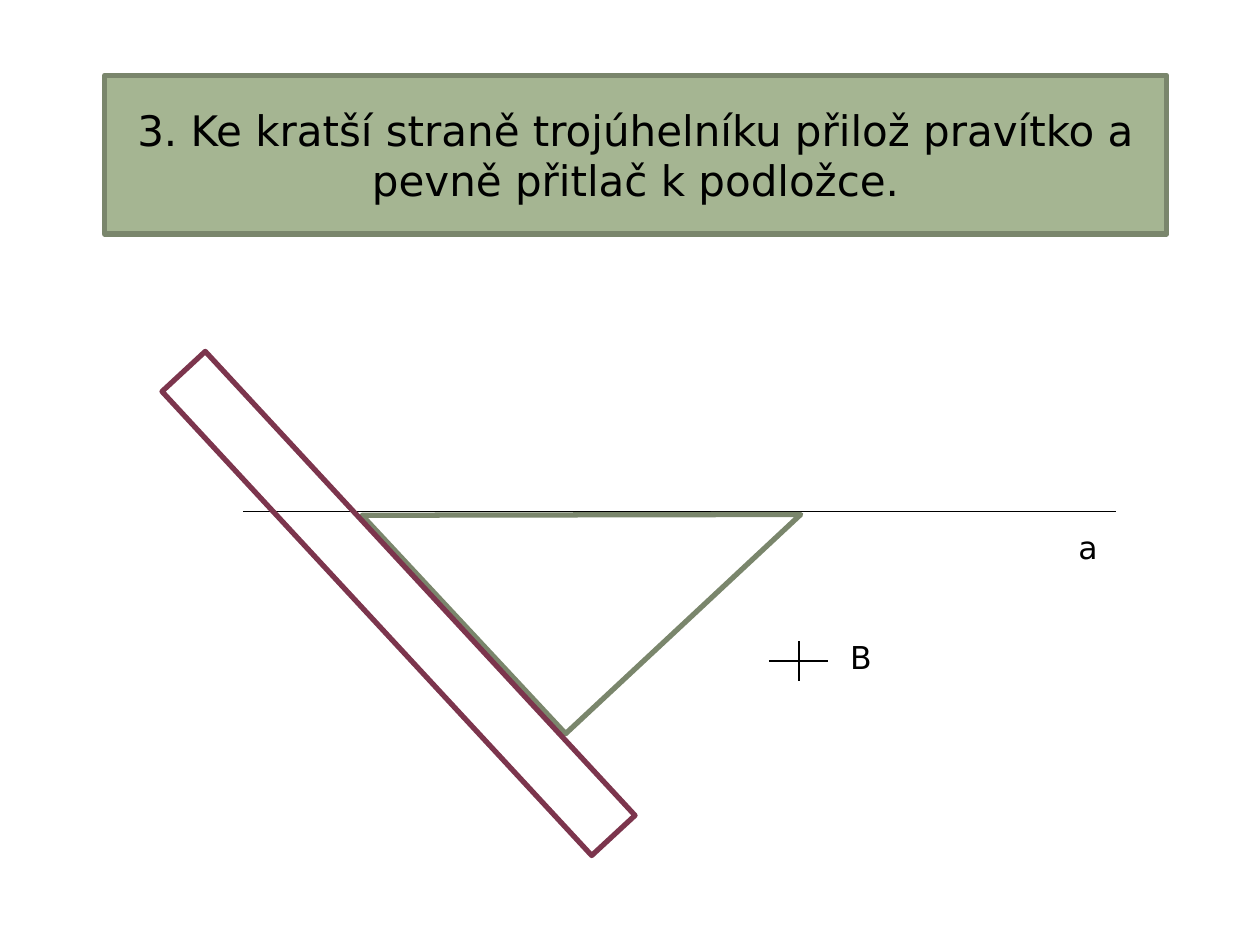
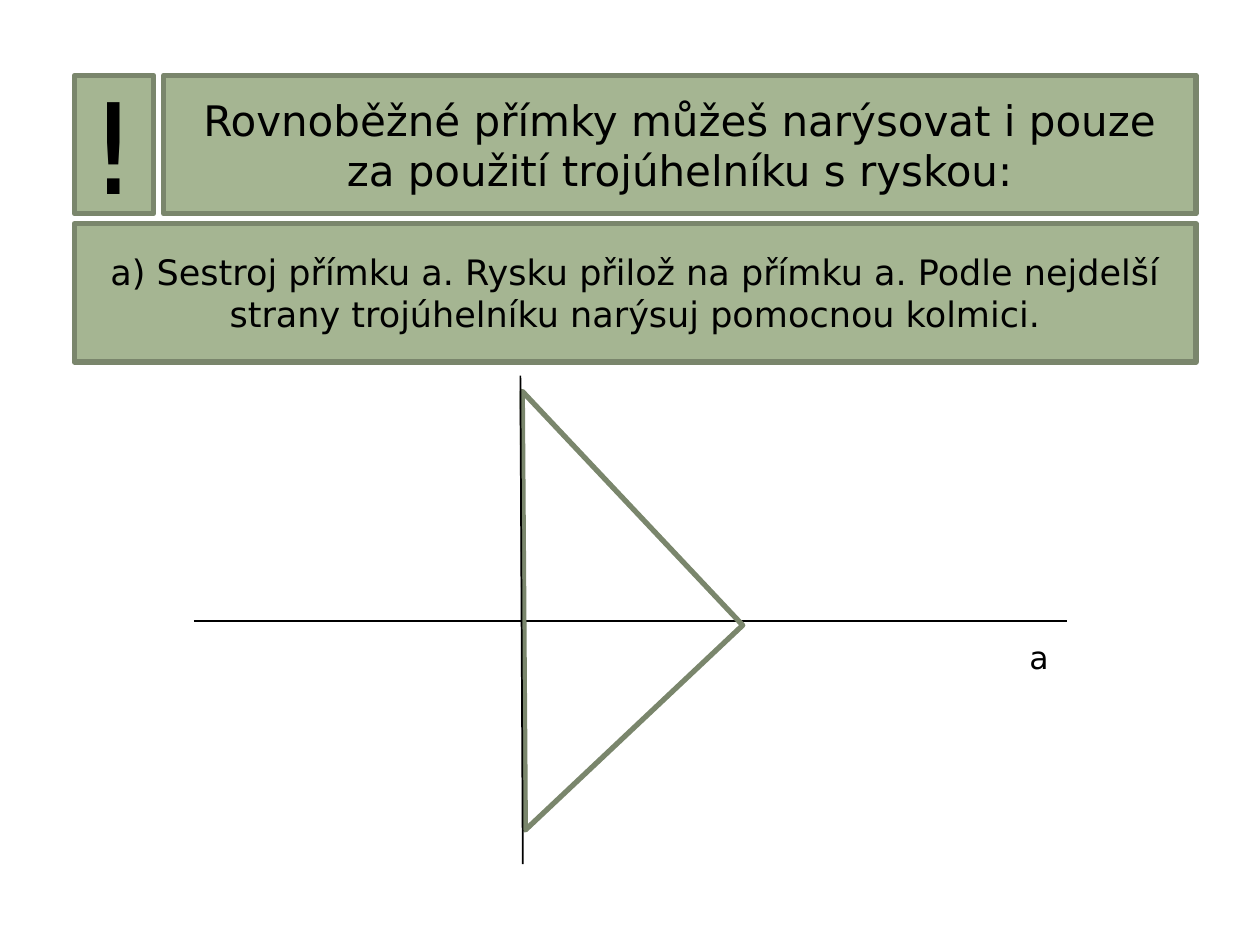
import dataclasses
import typing

import pptx
import pptx.dml.color
import pptx.enum.shapes
import pptx.enum.text
import pptx.oxml.ns
import pptx.util
from lxml import etree

Cm = pptx.util.Cm
Pt = pptx.util.Pt
Color = pptx.dml.color.RGBColor
Preset = pptx.enum.shapes.MSO_SHAPE


@dataclasses.dataclass(frozen=True)
class Theme:
    font: str = "DejaVu Sans"
    band: Color = Color(0xA5, 0xB5, 0x92)
    olive: Color = Color(0x7A, 0x86, 0x6C)
    plum: Color = Color(0x7C, 0x35, 0x4D)
    ink: Color = Color(0, 0, 0)
    title_size: int = 24
    step_size: int = 20
    label_size: int = 18
    mark_size: int = 72
    outline: int = 3
    thin: int = 1


THEME = Theme()


@dataclasses.dataclass(frozen=True)
class Frame:
    """Position and size in centimetres."""
    left: float
    top: float
    width: float
    height: float

    def lengths(self) -> list[pptx.util.Length]:
        return [Cm(value) for value in dataclasses.astuple(self)]


@dataclasses.dataclass(frozen=True)
class Banner:
    frame: Frame
    text: str
    size: int = THEME.title_size


@dataclasses.dataclass(frozen=True)
class Tool:
    """A drawing instrument shown as a rotated outline."""
    preset: Preset
    frame: Frame
    rotation: float
    color: Color


@dataclasses.dataclass(frozen=True)
class Segment:
    x1: float
    y1: float
    x2: float
    y2: float


def set_square(left: float, top: float, rotation: float) -> Tool:
    return Tool(Preset.RIGHT_TRIANGLE, Frame(left, top, 6.48, 6.02), rotation, THEME.olive)


def write(frame: typing.Any, text: str, size: int) -> None:
    frame.word_wrap = True
    frame.text = text
    font = frame.paragraphs[0].runs[0].font
    font.name, font.size = THEME.font, Pt(size)
    font.color.rgb = THEME.ink


def draw_outline(page: typing.Any, preset: Preset, frame: Frame, color: Color) -> typing.Any:
    """Add an unfilled shape with a thick, round-cornered outline."""
    shape = page.shapes.add_shape(preset, *frame.lengths())
    shape.shadow.inherit = False
    shape.fill.background()
    shape.line.color.rgb = color
    shape.line.width = Pt(THEME.outline)
    line = shape._element.spPr.find(pptx.oxml.ns.qn("a:ln"))
    etree.SubElement(line, pptx.oxml.ns.qn("a:round"))
    return shape


def draw_banner(page: typing.Any, banner: Banner) -> None:
    box = draw_outline(page, Preset.RECTANGLE, banner.frame, THEME.olive)
    box.fill.solid()
    box.fill.fore_color.rgb = THEME.band
    write(box.text_frame, banner.text, banner.size)
    box.text_frame.vertical_anchor = pptx.enum.text.MSO_ANCHOR.MIDDLE
    box.text_frame.paragraphs[0].alignment = pptx.enum.text.PP_ALIGN.CENTER


def draw_tool(page: typing.Any, tool: Tool) -> None:
    shape = draw_outline(page, tool.preset, tool.frame, tool.color)
    shape.rotation = tool.rotation


def draw_segment(page: typing.Any, segment: Segment) -> None:
    ends = [Cm(value) for value in dataclasses.astuple(segment)]
    line = page.shapes.add_connector(pptx.enum.shapes.MSO_CONNECTOR.STRAIGHT, *ends)
    line.line.color.rgb = THEME.ink
    line.line.width = Pt(THEME.thin)
    etree.SubElement(line._element.spPr, pptx.oxml.ns.qn("a:effectLst"))


def draw_label(page: typing.Any, text: str, left: float, top: float) -> None:
    box = page.shapes.add_textbox(*Frame(left, top, 1.6, 1.02).lengths())
    write(box.text_frame, text, THEME.label_size)
    box.text_frame.auto_size = pptx.enum.text.MSO_AUTO_SIZE.SHAPE_TO_FIT_TEXT


def draw_line_a(page: typing.Any, left: float, y: float) -> None:
    """Draw the horizontal line a with its name under the right end."""
    right = left + 17.59
    draw_segment(page, Segment(left, y, right, y))
    draw_label(page, "a", right - 1, y + 0.21)


def draw_point(page: typing.Any, name: str, x: float, y: float) -> None:
    """Mark a point with a cross and its name."""
    half_width, half_height = 0.6, 0.4
    draw_segment(page, Segment(x, y - half_height, x, y + half_height))
    draw_segment(page, Segment(x - half_width, y, x + half_width, y))
    draw_label(page, name, x + 0.79, y - 0.6)


def build_ruler_page(page: typing.Any) -> None:
    draw_banner(page, Banner(
        Frame(2.11, 1.52, 21.41, 3.2),
        "3. Ke kratší straně trojúhelníku přilož pravítko a pevně přitlač k podložce."))
    draw_line_a(page, 4.9, 10.31)
    draw_tool(page, set_square(8.48, 7.37, 317))
    draw_tool(page, Tool(Preset.RECTANGLE, Frame(7.44, 5.79, 1.19, 12.75), 317.2, THEME.plum))
    draw_point(page, "B", 16.1, 13.33)


def build_perpendicular_page(page: typing.Any) -> None:
    left, top, width, height, gap = 1.5, 1.52, 22.61, 2.79, 0.2
    mark_width = 1.6
    title_offset = mark_width + gap
    banners = [
        Banner(Frame(left + title_offset, top, width - title_offset, height),
               "Rovnoběžné přímky můžeš narýsovat i pouze za použití trojúhelníku s ryskou:"),
        Banner(Frame(left, top, mark_width, height), "!", THEME.mark_size),
        Banner(Frame(left, top + height + gap, width, height),
               "a) Sestroj přímku a. Rysku přilož na přímku a. "
               "Podle nejdelší strany trojúhelníku narýsuj pomocnou kolmici.",
               THEME.step_size),
    ]
    for banner in banners:
        draw_banner(page, banner)
    draw_line_a(page, 3.91, 12.52)
    draw_tool(page, set_square(7.32, 9.3, 226.7))
    draw_segment(page, Segment(10.49, 7.57, 10.54, 17.42))


def main() -> None:
    deck = pptx.Presentation()
    deck.slide_width, deck.slide_height = Cm(25.4), Cm(19.05)
    for build in (build_ruler_page, build_perpendicular_page):
        build(deck.slides.add_slide(deck.slide_layouts[6]))
    deck.save("out.pptx")


if __name__ == "__main__":
    main()
